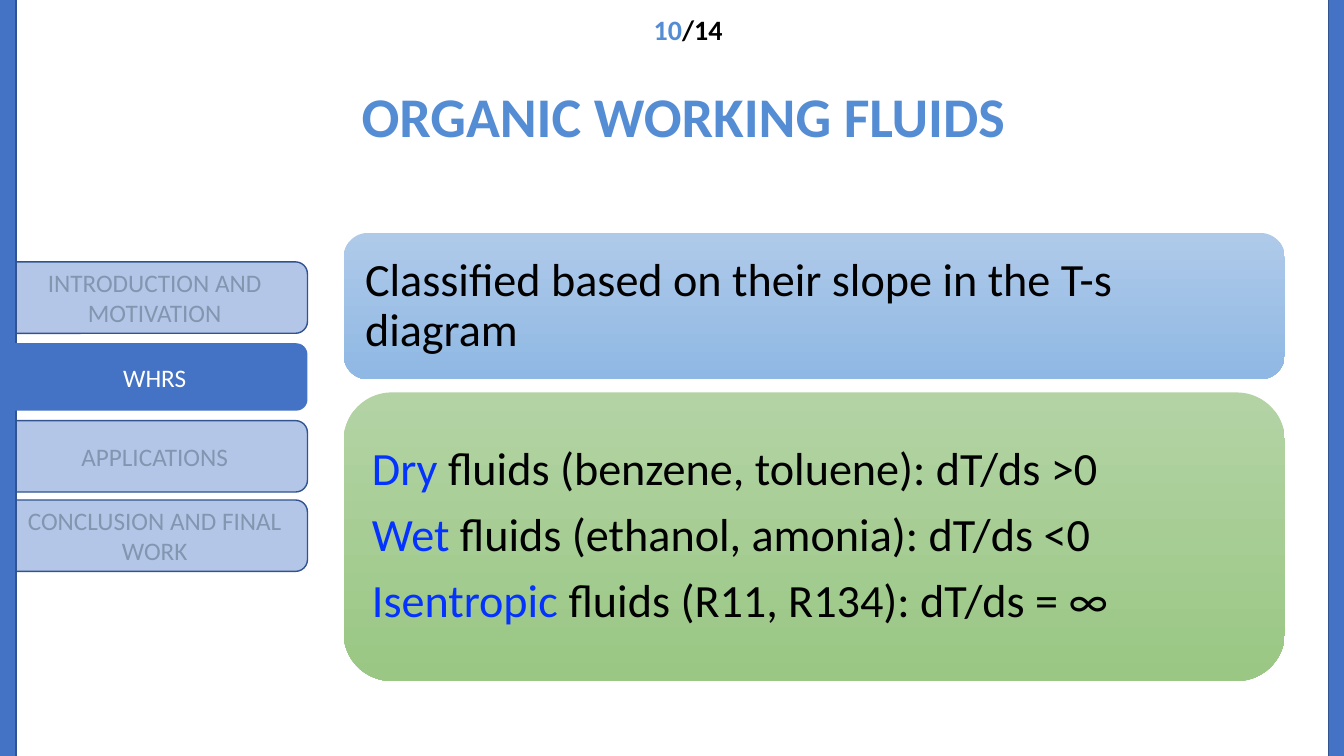
from pptx import Presentation
from pptx.dml.color import RGBColor
from pptx.enum.shapes import MSO_SHAPE
from pptx.enum.text import MSO_ANCHOR, MSO_AUTO_SIZE, PP_ALIGN
from pptx.util import Cm, Pt

RECTANGLE = MSO_SHAPE.RECTANGLE
ROUNDED = MSO_SHAPE.ROUNDED_RECTANGLE
TOP, MIDDLE = MSO_ANCHOR.TOP, MSO_ANCHOR.MIDDLE
LEFT, CENTER = PP_ALIGN.LEFT, PP_ALIGN.CENTER

FONT = "Calibri"
BLACK = RGBColor(0x00, 0x00, 0x00)
WHITE = RGBColor(0xFF, 0xFF, 0xFF)
ACCENT = RGBColor(0x54, 0x8D, 0xD4)
BLUE = RGBColor(0x44, 0x72, 0xC4)
OUTLINE = RGBColor(0x31, 0x53, 0x8F)
PALE_BLUE = RGBColor(0xB3, 0xC6, 0xE7)
MUTED = RGBColor(0x82, 0x96, 0xB0)
KEYWORD = RGBColor(0x04, 0x32, 0xFF)
BLUE_GRADIENT = (RGBColor(0xAF, 0xCA, 0xE9), RGBColor(0x8F, 0xB8, 0xE4))
GREEN_GRADIENT = (RGBColor(0xB3, 0xD3, 0xA4), RGBColor(0x9A, 0xC7, 0x84))

# Each paragraph is a list of (text, colour) runs.
TITLE = [[("ORGANIC WORKING FLUIDS", ACCENT)]]
PAGE = [[("10", ACCENT), ("/14", BLACK)]]
SECTIONS = ["INTRODUCTION AND MOTIVATION", "WHRS", "APPLICATIONS",
            "CONCLUSION AND FINAL WORK"]
ACTIVE_SECTION = "WHRS"
FLUIDS = [
    ("Dry ", "fluids (benzene, toluene): dT/ds >0"),
    ("Wet ", "fluids (ethanol, amonia): dT/ds <0"),
    ("Isentropic ", "fluids (R11, R134): dT/ds = ∞"),
]
# Top and height in cm, gradient, paragraphs
PANELS = [
    (5.87, 3.69, BLUE_GRADIENT,
     [[("Classified based on their slope in the T-s diagram", BLACK)]]),
    (9.89, 7.27, GREEN_GRADIENT,
     [[(kind, KEYWORD), (rule, BLACK)] for kind, rule in FLUIDS]),
]

BAR_LEFTS = (-0.05, 33.48)
BAR_TOP, BAR_WIDTH, BAR_HEIGHT = -0.5, 0.46, 20.6
TAB_LEFT, TAB_TOP, TAB_WIDTH, TAB_PITCH = 0.05, 6.6, 7.7, 2.0
TAB_HEIGHT, ACTIVE_HEIGHT = 1.8, 1.7
PANEL_LEFT, PANEL_WIDTH, PANEL_INSET = 8.66, 23.72, 0.36


def write(shape, paragraphs, size, align=CENTER, anchor=MIDDLE, bold=False):
    frame = shape.text_frame
    frame.word_wrap = True
    frame.auto_size = MSO_AUTO_SIZE.NONE
    frame.vertical_anchor = anchor
    for index, runs in enumerate(paragraphs):
        paragraph = frame.add_paragraph() if index else frame.paragraphs[0]
        paragraph.alignment = align
        for text, color in runs:
            run = paragraph.add_run()
            run.text = text
            run.font.name = FONT
            run.font.size = Pt(size)
            run.font.bold = bold
            run.font.color.rgb = color


def add_box(slide, kind, left, top, width, height, fill=None, outline=None):
    shape = slide.shapes.add_shape(kind, Cm(left), Cm(top), Cm(width), Cm(height))
    shape.shadow.inherit = False
    if fill is not None:
        shape.fill.solid()
        shape.fill.fore_color.rgb = fill
    if outline is None:
        shape.line.fill.background()
    else:
        shape.line.color.rgb = outline
        shape.line.width = Pt(1)
    return shape


def add_tab(slide, index, name):
    active = name == ACTIVE_SECTION
    height = ACTIVE_HEIGHT if active else TAB_HEIGHT
    top = TAB_TOP + index * TAB_PITCH + (TAB_HEIGHT - height) / 2
    tab = add_box(slide, ROUNDED, TAB_LEFT, top, TAB_WIDTH, height,
                  BLUE if active else PALE_BLUE, None if active else OUTLINE)
    write(tab, [[(name, WHITE if active else MUTED)]], 18)


def add_panel(slide, top, height, gradient, paragraphs):
    panel = add_box(slide, ROUNDED, PANEL_LEFT, top, PANEL_WIDTH, height)
    panel.fill.gradient()
    panel.fill.gradient_angle = 270
    for position, (stop, color) in enumerate(zip(panel.fill.gradient_stops, gradient)):
        stop.position = position
        stop.color.rgb = color
    write(panel, paragraphs, 33, LEFT)
    frame = panel.text_frame
    frame.margin_left = frame.margin_right = Cm(PANEL_INSET)
    frame.margin_top = frame.margin_bottom = Cm(PANEL_INSET)
    for index, paragraph in enumerate(frame.paragraphs):
        paragraph.line_spacing = 0.9
        paragraph.space_before = Pt(11.6 if index else 0)


def main():
    presentation = Presentation()
    presentation.slide_width, presentation.slide_height = Cm(33.87), Cm(19.05)
    slide = presentation.slides.add_slide(presentation.slide_layouts[5])

    title = slide.shapes.title
    title.left, title.top, title.width, title.height = Cm(0.48), Cm(1.93), Cm(33.48), Cm(2.21)
    write(title, TITLE, 40, anchor=TOP, bold=True)

    for index, name in enumerate(SECTIONS):
        if name != ACTIVE_SECTION:
            add_tab(slide, index, name)
    for left in BAR_LEFTS:
        add_box(slide, RECTANGLE, left, BAR_TOP, BAR_WIDTH, BAR_HEIGHT, BLUE, OUTLINE)
    # The active tab lies over the left bar.
    add_tab(slide, SECTIONS.index(ACTIVE_SECTION), ACTIVE_SECTION)

    page = slide.shapes.add_textbox(Cm(11.61), Cm(0.2), Cm(11.46), Cm(1.12))
    write(page, PAGE, 20, anchor=TOP, bold=True)

    for panel in PANELS:
        add_panel(slide, *panel)

    presentation.save("out.pptx")


if __name__ == "__main__":
    main()
